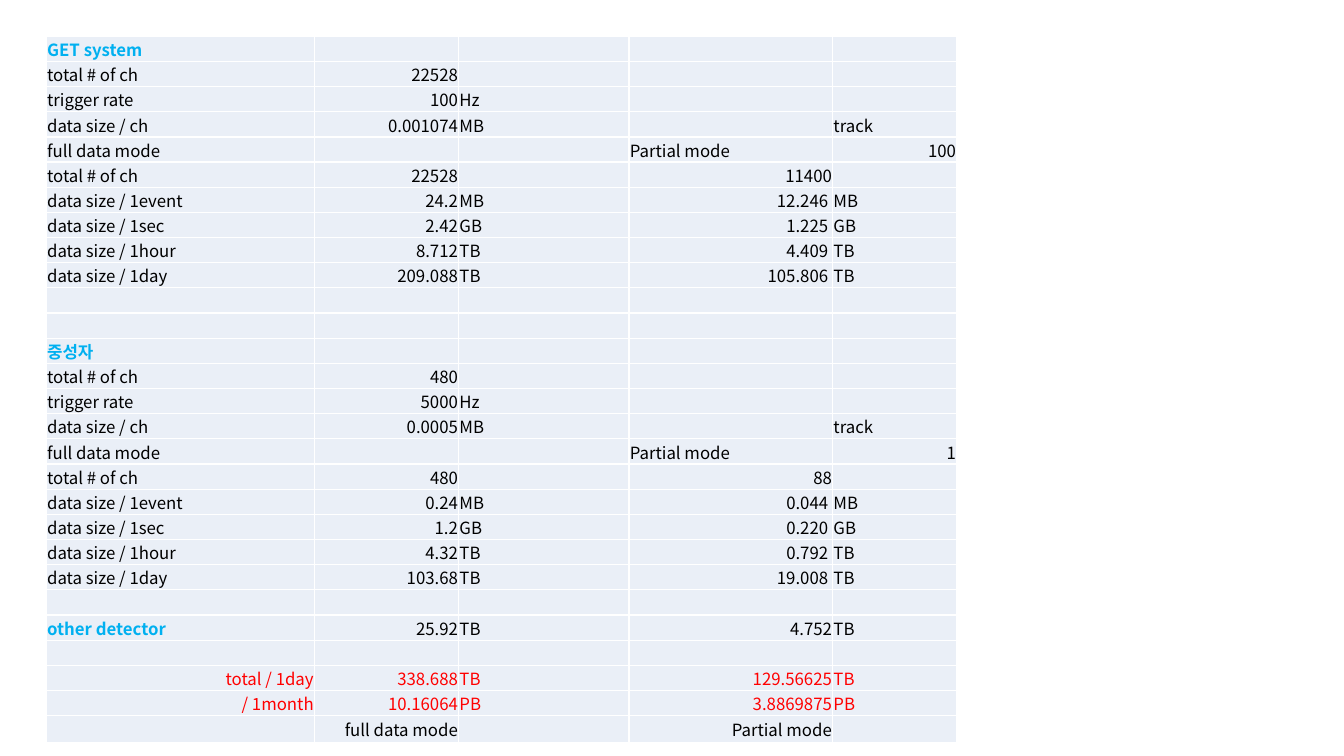
"""Build a one-slide table of detector data sizes in full and partial mode."""
from lxml.etree import SubElement
from pptx import Presentation
from pptx.dml.color import RGBColor
from pptx.enum.text import MSO_ANCHOR, PP_ALIGN
from pptx.oxml.ns import qn
from pptx.util import Inches, Pt

FONT = "Noto Sans CJK KR"
FONT_SIZE = 12
COLORS = {"cell": "EAEFF7", "border": "FFFFFF", "heading": "00B0F0",
          "text": "000000", "total": "FF0000"}

DETECTORS = [
    {"name": "GET system", "channels": "22528", "rate": "100", "channel size": "0.001074",
     "tracks": "100", "partial channels": "11400",
     "full": ["24.2", "2.42", "8.712", "209.088"],
     "partial": ["12.246 ", "1.225 ", "4.409 ", "105.806 "]},
    {"name": "중성자", "channels": "480", "rate": "5000", "channel size": "0.0005",
     "tracks": "1", "partial channels": "88",
     "full": ["0.24", "1.2", "4.32", "103.68"],
     "partial": ["0.044 ", "0.220 ", "0.792 ", "19.008 "]},
]
PERIODS = [("1event", "MB"), ("1sec", "GB"), ("1hour", "TB"), ("1day", "TB")]
EMPTY_ROW = ("", "", "", "", "")
OTHER_DETECTOR = ("other detector", "25.92", "TB", "4.752", "TB")
TOTALS = [
    ("total / 1day", "338.688", "TB", "129.56625", "TB"),
    ("/ 1month", "10.16064", "PB", "3.8869875", "PB"),
]
MODES = ("", "full data mode", "", "Partial mode", "")

LEFT, TOP = 0.46, 0.36
COLUMN_WIDTHS = [2.66, 1.43, 1.69, 2.02, 1.23]
ROW_HEIGHT, LAST_ROW_HEIGHT = 0.17, 0.27
MARGIN_POINTS = 0.55


def detector_rows(detector):
    """Return the ten rows that describe one detector."""
    sizes = [(f"data size / {period}", full, unit, partial, unit)
             for (period, unit), full, partial
             in zip(PERIODS, detector["full"], detector["partial"])]
    return [
        (detector["name"], "", "", "", ""),
        ("total # of ch", detector["channels"], "", "", ""),
        ("trigger rate", detector["rate"], "Hz", "", ""),
        ("data size / ch", detector["channel size"], "MB", "", "track"),
        ("full data mode", "", "", "Partial mode", detector["tracks"]),
        ("total # of ch", detector["channels"], "", detector["partial channels"], ""),
    ] + sizes


def draw_borders(cell):
    """Give a cell thin lines on all four sides."""
    properties = cell._tc.get_or_add_tcPr()
    for side in ("a:lnL", "a:lnR", "a:lnT", "a:lnB"):
        line = SubElement(properties, qn(side), w=str(Pt(1)))
        fill = SubElement(line, qn("a:solidFill"))
        SubElement(fill, qn("a:srgbClr"), val=COLORS["border"])


def fill_cell(cell, text, color, bold, right):
    """Format a cell and write its text."""
    draw_borders(cell)
    cell.fill.solid()
    cell.fill.fore_color.rgb = RGBColor.from_string(COLORS["cell"])
    cell.vertical_anchor = MSO_ANCHOR.MIDDLE
    cell.margin_left = cell.margin_right = cell.margin_top = Pt(MARGIN_POINTS)
    cell.margin_bottom = 0
    cell.text = text
    paragraph = cell.text_frame.paragraphs[0]
    paragraph.alignment = PP_ALIGN.RIGHT if right else PP_ALIGN.LEFT
    font = paragraph.font
    font.name, font.size, font.bold = FONT, Pt(FONT_SIZE), bold
    font.color.rgb = RGBColor.from_string(COLORS[color])
    SubElement(paragraph._p.pPr.find(qn("a:defRPr")), qn("a:ea"), typeface=FONT)
    end = SubElement(paragraph._p, qn("a:endParaRPr"), sz=str(FONT_SIZE * 100))
    SubElement(end, qn("a:latin"), typeface=FONT)


def main():
    """Lay out the table and save the presentation."""
    get_system, neutron = map(detector_rows, DETECTORS)
    rows = [*get_system, EMPTY_ROW, EMPTY_ROW, *neutron, EMPTY_ROW,
            OTHER_DETECTOR, EMPTY_ROW, *TOTALS, MODES]
    headings = [detector["name"] for detector in DETECTORS] + [OTHER_DETECTOR[0]]

    presentation = Presentation()
    presentation.slide_width, presentation.slide_height = Inches(13.33), Inches(7.5)
    slide = presentation.slides.add_slide(presentation.slide_layouts[6])
    height = ROW_HEIGHT * (len(rows) - 1) + LAST_ROW_HEIGHT
    table = slide.shapes.add_table(
        len(rows), len(COLUMN_WIDTHS), Inches(LEFT), Inches(TOP),
        Inches(sum(COLUMN_WIDTHS)), Inches(height)).table
    table.first_row = table.horz_banding = False
    for column, width in zip(table.columns, COLUMN_WIDTHS):
        column.width = Inches(width)
    for table_row in table.rows:
        table_row.height = Inches(ROW_HEIGHT)
    table.rows[len(rows) - 1].height = Inches(LAST_ROW_HEIGHT)

    for row_index, row in enumerate(rows):
        summary = row in TOTALS or row == MODES
        for column_index, text in enumerate(row):
            heading = text in headings
            color = "heading" if heading else "total" if row in TOTALS else "text"
            right = text[:1].isdigit() or (summary and column_index in (0, 1, 3))
            fill_cell(table.cell(row_index, column_index), text, color, heading, right)

    presentation.save("out.pptx")


if __name__ == "__main__":
    main()
